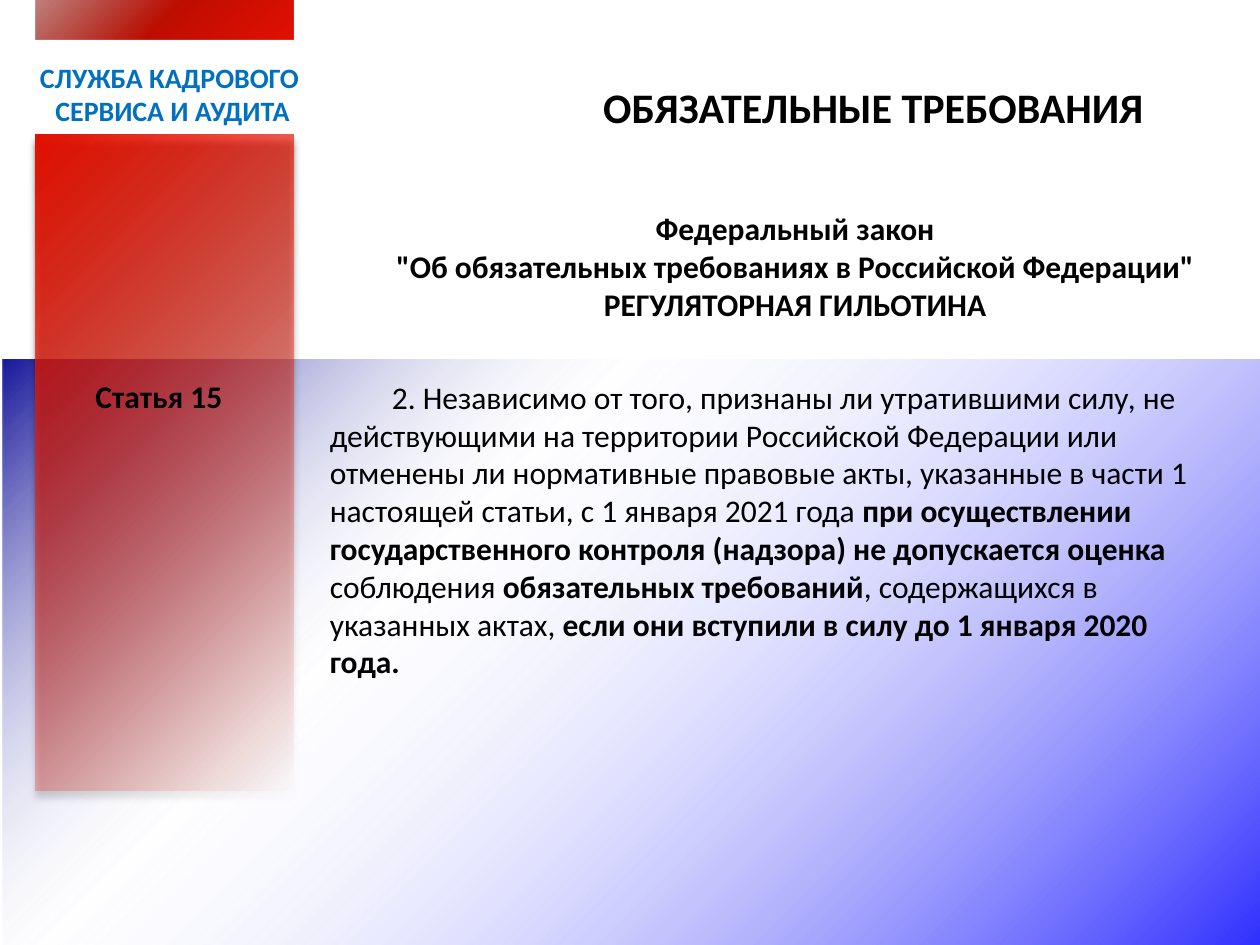
from lxml.etree import SubElement
from pptx import Presentation
from pptx.dml.color import RGBColor
from pptx.enum.shapes import MSO_SHAPE as Shape
from pptx.enum.text import MSO_AUTO_SIZE as AutoSize, PP_ALIGN as Align
from pptx.oxml import parse_xml
from pptx.oxml.ns import nsdecls, qn
from pptx.util import Cm, Pt

NAVY = RGBColor(0x18, 0x18, 0x9B)
PALE_BLUE = RGBColor(0xF4, 0xF4, 0xFD)
BRIGHT_BLUE = RGBColor(0x2F, 0x2F, 0xFF)
LIGHT_RED = RGBColor(0xFF, 0x2E, 0x1D)
RED = RGBColor(0xE2, 0x11, 0x00)
DEEP_RED = RGBColor(0xBE, 0x0E, 0x00)
DARK_RED = RGBColor(0x86, 0x0A, 0x00)
SERVICE_BLUE = RGBColor(0x00, 0x70, 0xC0)
BLACK = RGBColor(0x00, 0x00, 0x00)

BAND_LEFT, BAND_WIDTH = 0.71, 5.21

ARTICLE_SPANS = [
    ("2. Независимо от того, признаны ли утратившими силу, не действующими на "
     "территории Российской Федерации или отменены ли нормативные правовые акты, "
     "указанные в части 1 настоящей статьи, с 1 января 2021 года ", False),
    ("при осуществлении государственного контроля (надзора) не допускается оценка ", True),
    ("соблюдения ", False),
    ("обязательных требований", True),
    (", содержащихся в указанных актах, ", False),
    ("если они вступили в силу до 1 января 2020 года.", True),
]


def add_color(parent, color, opacity):
    """Append a colour with its opacity in percent."""
    element = SubElement(parent, qn("a:srgbClr"), val=str(color))
    SubElement(element, qn("a:alpha"), val=str(opacity * 1000))


def add_gradient_panel(page, left, top, width, height, stops, angle):
    """Add a borderless rectangle with (position, colour, opacity) stops."""
    panel = page.shapes.add_shape(Shape.RECTANGLE, Cm(left), Cm(top), Cm(width), Cm(height))
    panel.shadow.inherit = False
    panel.line.fill.background()
    gradient = parse_xml(f'<a:gradFill {nsdecls("a")} rotWithShape="1"/>')
    stop_list = SubElement(gradient, qn("a:gsLst"))
    for position, color, opacity in stops:
        add_color(SubElement(stop_list, qn("a:gs"), pos=str(position * 1000)), color, opacity)
    SubElement(gradient, qn("a:lin"), ang=str(angle * 60000), scaled="0")
    properties = panel._element.spPr
    properties.find(qn("a:prstGeom")).addnext(gradient)
    return panel


def add_drop_shadow(panel, distance, opacity):
    """Cast a soft black shadow straight down."""
    effects = panel._element.spPr.find(qn("a:effectLst"))
    shadow = SubElement(effects, qn("a:outerShdw"), blurRad=str(distance),
                        dist=str(distance), dir="5400000", rotWithShape="0")
    add_color(shadow, BLACK, opacity)


def style_paragraph(para, size, color, align, bold=None):
    """Set the font and alignment of a paragraph."""
    para.alignment = align
    font = para.font
    font.name, font.size, font.bold = "Calibri", Pt(size), bold
    font.color.rgb = color


def add_text_frame(page, left, top, width, height, wrap=True):
    """Add a text box that grows with its text and return its frame."""
    box = page.shapes.add_textbox(Cm(left), Cm(top), Cm(width), Cm(height))
    frame = box.text_frame
    frame.word_wrap = wrap
    frame.auto_size = AutoSize.SHAPE_TO_FIT_TEXT
    return frame


def add_heading(page, left, top, width, height, lines, size=18, color=BLACK,
                align=Align.CENTER, wrap=True):
    """Add bold text with one paragraph per line."""
    frame = add_text_frame(page, left, top, width, height, wrap)
    frame.text = "\n".join(lines)
    for para in frame.paragraphs:
        style_paragraph(para, size, color, align, bold=True)


def add_article(page, left, top, width, height, spans):
    """Add an indented paragraph that mixes plain and bold spans."""
    para = add_text_frame(page, left, top, width, height).paragraphs[0]
    style_paragraph(para, 18, BLACK, Align.LEFT)
    para._p.get_or_add_pPr().set("indent", str(Cm(1.25)))
    for text, bold in spans:
        span = para.add_run()
        span.text = text
        span.font.bold = bold


def main():
    """Build the slide and save the deck."""
    deck = Presentation()
    deck.slide_width, deck.slide_height = Cm(25.4), Cm(19.05)
    page = deck.slides.add_slide(deck.slide_layouts[6])

    add_gradient_panel(page, 0.05, 7.24, 25.4, 11.81,
                       [(0, NAVY, 100), (34, PALE_BLUE, 8), (100, BRIGHT_BLUE, 100)], 45)
    band = add_gradient_panel(page, BAND_LEFT, 2.72, BAND_WIDTH, 13.21,
                              [(0, LIGHT_RED, 0), (100, RED, 100)], 225)
    add_drop_shadow(band, Pt(4), 59)
    add_gradient_panel(page, BAND_LEFT, 0, BAND_WIDTH, 0.79,
                       [(0, DARK_RED, 51), (50, DEEP_RED, 100), (100, RED, 100)], 45)

    add_heading(page, 0.51, 1.09, 5.94, 1.63, ["СЛУЖБА КАДРОВОГО ", "СЕРВИСА И АУДИТА"],
                size=16, color=SERVICE_BLUE, wrap=False)
    add_heading(page, 10.9, 1.52, 12.4, 1.27, ["ОБЯЗАТЕЛЬНЫЕ ТРЕБОВАНИЯ"],
                size=24, align=Align.RIGHT)
    add_heading(page, 1.3, 7.47, 3.81, 1.02, ["Статья 15"])
    add_heading(page, 6.86, 4.09, 18.34, 2.57, [
        "Федеральный закон",
        '"Об обязательных требованиях в Российской Федерации"',
        "РЕГУЛЯТОРНАЯ ГИЛЬОТИНА",
    ])
    add_article(page, 6.4, 7.49, 17.91, 6.4, ARTICLE_SPANS)
    deck.save("out.pptx")


if __name__ == "__main__":
    main()
